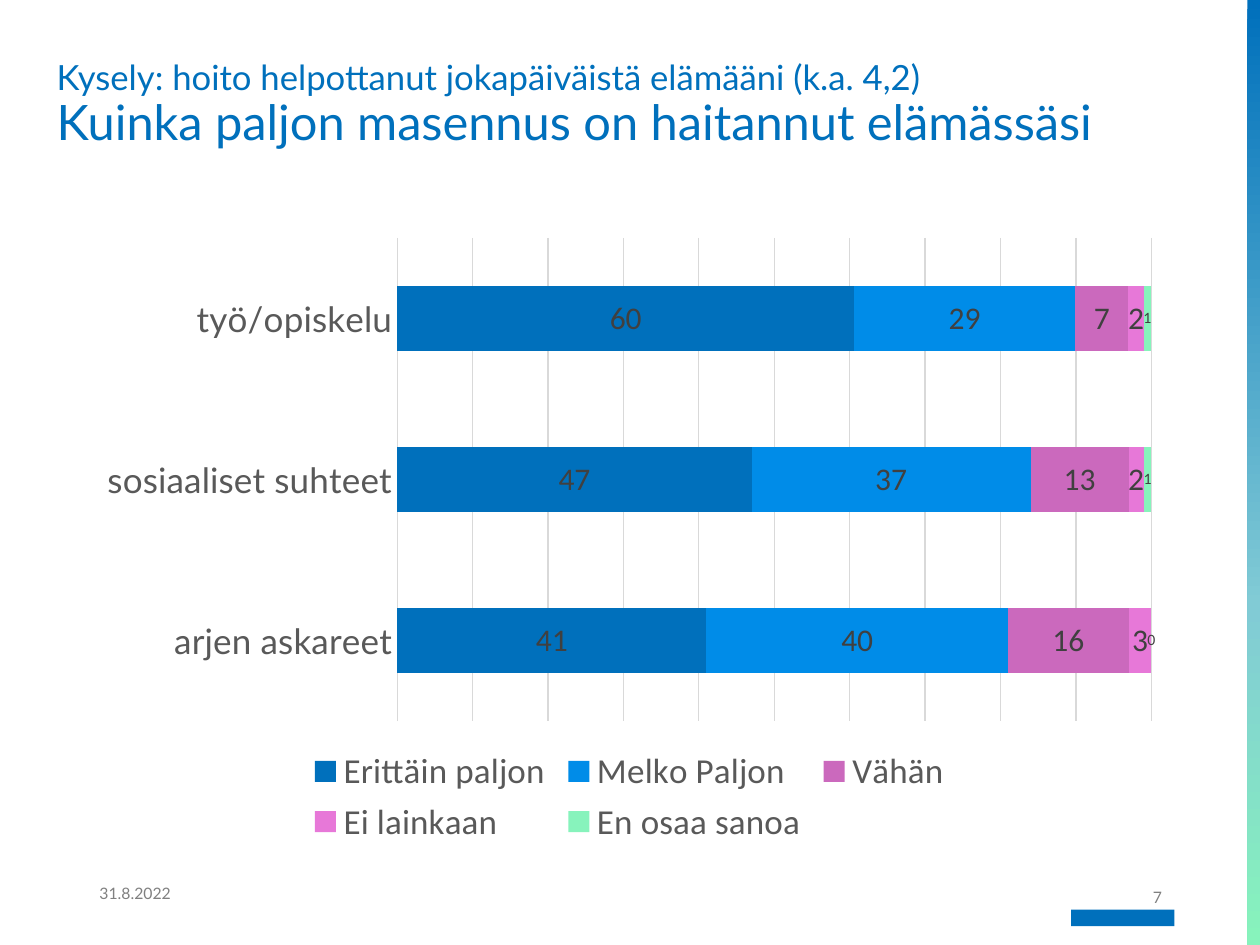
from copy import deepcopy

from pptx import Presentation
from pptx import util as u
from pptx.chart.data import CategoryChartData
from pptx.dml.color import RGBColor
from pptx.enum import chart as ch, shapes, text

BLUE = RGBColor(0x00, 0x70, 0xBC)
SKY = RGBColor(0x00, 0x8C, 0xE8)
PURPLE = RGBColor(0xCB, 0x69, 0xBD)
PINK = RGBColor(0xE7, 0x78, 0xD8)
MINT = RGBColor(0x87, 0xF3, 0xBC)
TEAL = RGBColor(0x81, 0xCB, 0xD5)
LABEL = RGBColor(0x40, 0x40, 0x40)
AXIS = RGBColor(0x59, 0x59, 0x59)
FOOTER = RGBColor(0x80, 0x80, 0x80)
GRID = RGBColor(0xD9, 0xD9, 0xD9)

prs = Presentation()
prs.slide_width, prs.slide_height = u.Inches(10), u.Inches(7.5)
slide = prs.slides.add_slide(prs.slide_layouts[5])


def box(left, top, width, height):
    """Turn inches on the slide into lengths."""
    return [u.Inches(n) for n in (left, top, width, height)]


def write(paragraph, words, size, color, align=text.PP_ALIGN.LEFT):
    paragraph.alignment = align
    run = paragraph.add_run()
    run.text = words
    run.font.name, run.font.size = "Lato", u.Pt(size)
    run.font.color.rgb = color


# Accent bar by the page number and gradient strip on the right edge
accent = slide.shapes.add_shape(shapes.MSO_SHAPE.RECTANGLE, *box(8.5, 7.22, 0.82, 0.13))
strip = slide.shapes.add_shape(shapes.MSO_SHAPE.RECTANGLE, *box(9.9, 0, 0.1, 7.5))
for bar in (accent, strip):
    bar.shadow.inherit = False
    bar.line.fill.background()
accent.fill.solid()
accent.fill.fore_color.rgb = BLUE
strip.fill.gradient()
strip.fill.gradient_angle = 270
stop_list = strip.fill._fill._gradFill.gsLst
stop_list.insert(1, deepcopy(stop_list[0]))
for stop, color, position in zip(strip.fill.gradient_stops, (BLUE, TEAL, MINT), (0, 0.64, 1)):
    stop.color.rgb = color
    stop.position = position

# Title
title = slide.shapes.title
title.left, title.top, title.width, title.height = box(0.35, 0.43, 8.96, 1.22)
title.text_frame.vertical_anchor = text.MSO_ANCHOR.TOP
title.text_frame.auto_size = text.MSO_AUTO_SIZE.NONE
heading = title.text_frame.paragraphs[0]
heading.line_spacing = 0.9
write(heading, "Kysely: hoito helpottanut jokapäiväistä elämääni (k.a. 4,2)", 19.8, BLUE)
heading.add_line_break()
write(heading, "Kuinka paljon masennus on haitannut elämässäsi", 27.9, BLUE)

# Survey answers: name, values, colour, label size
answers = [
    ("Erittäin paljon", (41, 47, 60), BLUE, 18),
    ("Melko Paljon", (40, 37, 29), SKY, 18),
    ("Vähän", (16, 13, 7), PURPLE, 18),
    ("Ei lainkaan", (3, 2, 2), PINK, 18),
    ("En osaa sanoa", (0, 1, 1), MINT, 9),
]
data = CategoryChartData(number_format="0")
data.categories = ["arjen askareet", "sosiaaliset suhteet", "työ/opiskelu"]
for name, values, _, _ in answers:
    data.add_series(name, values)
survey = slide.shapes.add_chart(
    ch.XL_CHART_TYPE.BAR_STACKED_100, *box(0.68, 1.79, 8.63, 4.96), data).chart
survey.has_title = False
survey.font.name, survey.font.size = "Calibri", u.Pt(10)

plot = survey.plots[0]
plot.gap_width, plot.overlap = 150, 100
plot.vary_by_categories = False
for series, (_, _, color, size) in zip(plot.series, answers):
    series.format.fill.solid()
    series.format.fill.fore_color.rgb = color
    labels = series.data_labels
    labels.show_value = True
    labels.position = ch.XL_LABEL_POSITION.CENTER
    labels.number_format, labels.number_format_is_linked = "0", False
    labels.font.name, labels.font.size = "Calibri", u.Pt(size)
    labels.font.color.rgb = LABEL

# Axes and legend
questions, shares = survey.category_axis, survey.value_axis
questions.major_tick_mark = ch.XL_TICK_MARK.NONE
shares.visible = False
shares.has_major_gridlines = True
for line in (questions.format.line, shares.major_gridlines.format.line):
    line.color.rgb, line.width = GRID, u.Pt(0.75)
survey.has_legend = True
survey.legend.position = ch.XL_LEGEND_POSITION.BOTTOM
survey.legend.include_in_layout = False
for font, face in ((questions.tick_labels.font, "Lato"), (survey.legend.font, "Calibri")):
    font.name, font.size = face, u.Pt(20)
    font.color.rgb = AXIS

# Date and page number
for words, place, align in (
    ("31.8.2022", (0.69, 6.89, 2.25, 0.4), text.PP_ALIGN.LEFT),
    ("7", (7.84, 6.89, 1.48, 0.46), text.PP_ALIGN.RIGHT),
):
    frame = slide.shapes.add_textbox(*box(*place)).text_frame
    frame.word_wrap = True
    frame.vertical_anchor = text.MSO_ANCHOR.MIDDLE
    write(frame.paragraphs[0], words, 9, FOOTER, align)

prs.save("out.pptx")
